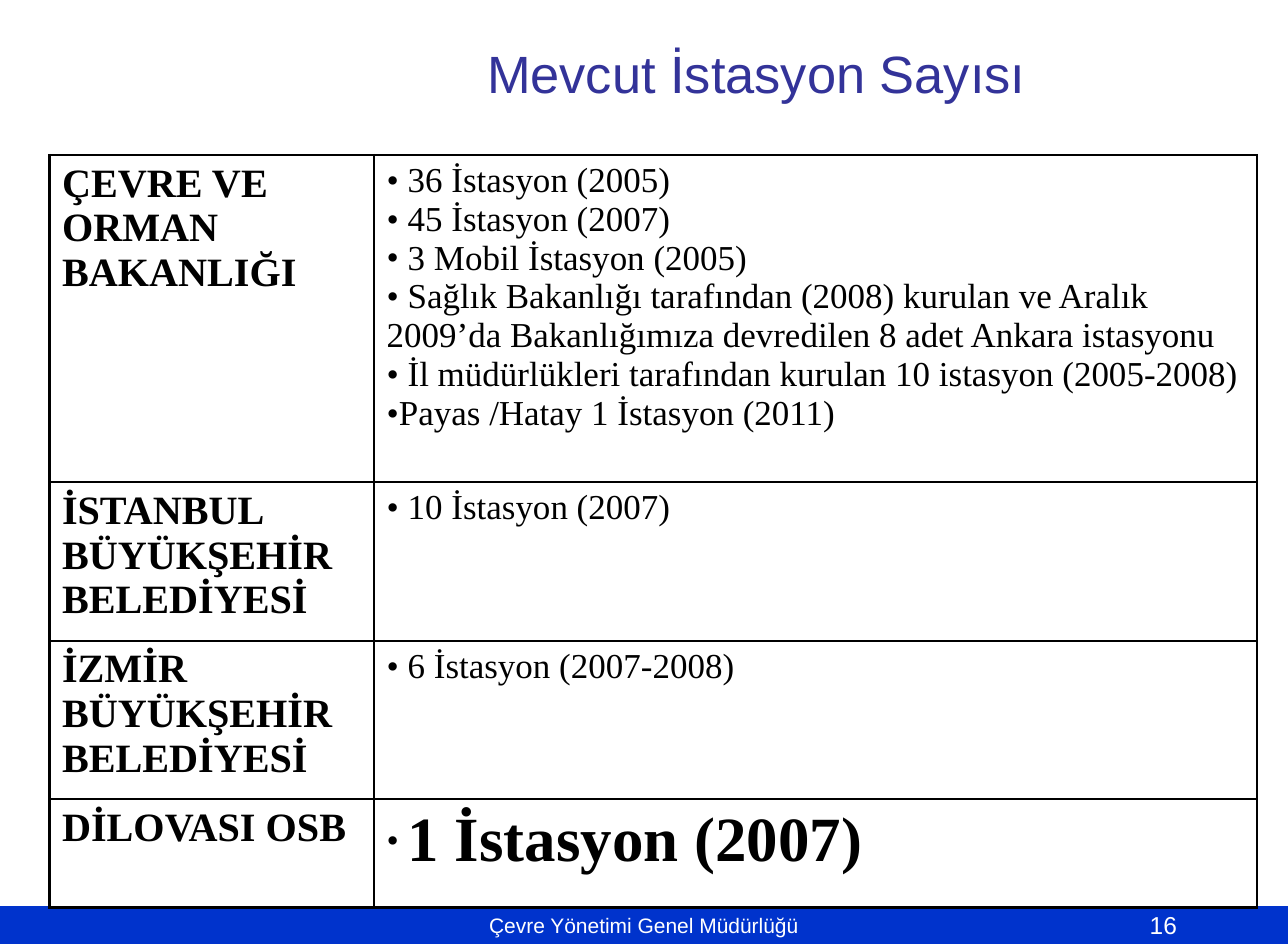
import pptx
import pptx.util
import pptx.dml.color
import pptx.enum.shapes
import pptx.enum.text
from lxml import etree
from pptx.oxml.ns import qn

Pt = pptx.util.Pt
ALIGN = pptx.enum.text.PP_ALIGN
ANCHOR = pptx.enum.text.MSO_ANCHOR

COLORS = {"bar": "0033CC", "title": "333399", "text": "000000", "white": "FFFFFF"}
SANS, SERIF = "Arial", "Times New Roman"
WIDE, HIGH = 737, 540

COLS = [185.8, 505.2]
ROWS = [
    (187.2, "ÇEVRE VE ORMAN BAKANLIĞI", [
        " 36 İstasyon (2005)",
        " 45 İstasyon (2007)",
        " 3 Mobil İstasyon (2005)",
        " Sağlık Bakanlığı tarafından (2008) kurulan ve Aralık 2009’da "
        "Bakanlığımıza devredilen 8 adet Ankara istasyonu",
        " İl müdürlükleri tarafından kurulan 10 istasyon (2005-2008)",
        "Payas /Hatay 1 İstasyon (2011)",
    ]),
    (90.7, "İSTANBUL BÜYÜKŞEHİR BELEDİYESİ ", [" 10 İstasyon (2007) "]),
    (90.7, "İZMİR BÜYÜKŞEHİR BELEDİYESİ ", [" 6 İstasyon (2007-2008)"]),
    (61.9, "DİLOVASI OSB", [" "]),
]
LARGE = "1 İstasyon (2007)"


def color(name):
    return pptx.dml.color.RGBColor.from_string(COLORS[name])


def style(run, size, face, name, bold=False):
    run.font.size = Pt(size)
    run.font.name = face
    run.font.bold = bold
    run.font.color.rgb = color(name)


def label(slide, box, text, size, name, align):
    shape = slide.shapes.add_textbox(*map(Pt, box))
    frame = shape.text_frame
    frame.word_wrap = True
    frame.vertical_anchor = ANCHOR.MIDDLE
    frame.text = text
    para = frame.paragraphs[0]
    para.alignment = align
    style(para.runs[0], size, SANS, name)


def footer(slide, box, text, page):
    """Blue bar with its centred text and the page number near the right."""
    left, top, width, height = box
    bar = slide.shapes.add_shape(
        pptx.enum.shapes.MSO_SHAPE.RECTANGLE, *map(Pt, box))
    bar.shadow.inherit = False
    bar.fill.solid()
    bar.fill.fore_color.rgb = color("bar")
    bar.line.fill.background()
    frame = bar.text_frame
    frame.text = text
    frame.vertical_anchor = ANCHOR.MIDDLE
    frame.paragraphs[0].alignment = ALIGN.CENTER
    style(frame.paragraphs[0].runs[0], 12, SANS, "white")
    label(slide, (left + width - 86.2, top, 57.6, height), page, 14, "white",
          ALIGN.LEFT)


def border(cell):
    props = cell._tc.get_or_add_tcPr()
    for side in ("a:lnL", "a:lnR", "a:lnT", "a:lnB"):
        line = etree.SubElement(props, qn(side), w=str(Pt(1.5)))
        fill = etree.SubElement(line, qn("a:solidFill"))
        etree.SubElement(fill, qn("a:srgbClr"), val=COLORS["text"])
    cell.fill.background()


def bullet(para):
    props = para._p.get_or_add_pPr()
    etree.SubElement(props, qn("a:buFont"), typeface=SERIF)
    etree.SubElement(props, qn("a:buChar"), char="•")


def stations(slide, box):
    """Table of owners and their stations."""
    frame = slide.shapes.add_table(len(ROWS), len(COLS), *map(Pt, box))
    table = frame.table
    table.first_row = table.horz_banding = False
    for col, width in zip(table.columns, COLS):
        col.width = Pt(width)
    for row, (height, owner, items) in zip(table.rows, ROWS):
        row.height = Pt(height)
        head, body = row.cells
        border(head)
        border(body)
        head.text_frame.text = owner
        style(head.text_frame.paragraphs[0].runs[0], 23, SERIF, "text", True)
        body.text_frame.text = "\n".join(items)
        for para in body.text_frame.paragraphs:
            bullet(para)
            style(para.runs[0], 20, SERIF, "text")
    run = table.cell(len(ROWS) - 1, 1).text_frame.paragraphs[0].add_run()
    run.text = LARGE
    style(run, 36, SERIF, "text", True)


def main():
    deck = pptx.Presentation()
    deck.slide_width, deck.slide_height = Pt(WIDE), Pt(HIGH)
    slide = deck.slides.add_slide(deck.slide_layouts[6])
    footer(slide, (0, 518.4, WIDE, 21.6), "Çevre Yönetimi Genel Müdürlüğü", "16")
    label(slide, (128.9, 0, WIDE - 128.9, 82.8), "Mevcut İstasyon Sayısı", 30,
          "title", ALIGN.CENTER)
    stations(slide, (28.3, 88.6, sum(COLS), sum(row[0] for row in ROWS)))
    deck.save("out.pptx")


if __name__ == "__main__":
    main()
